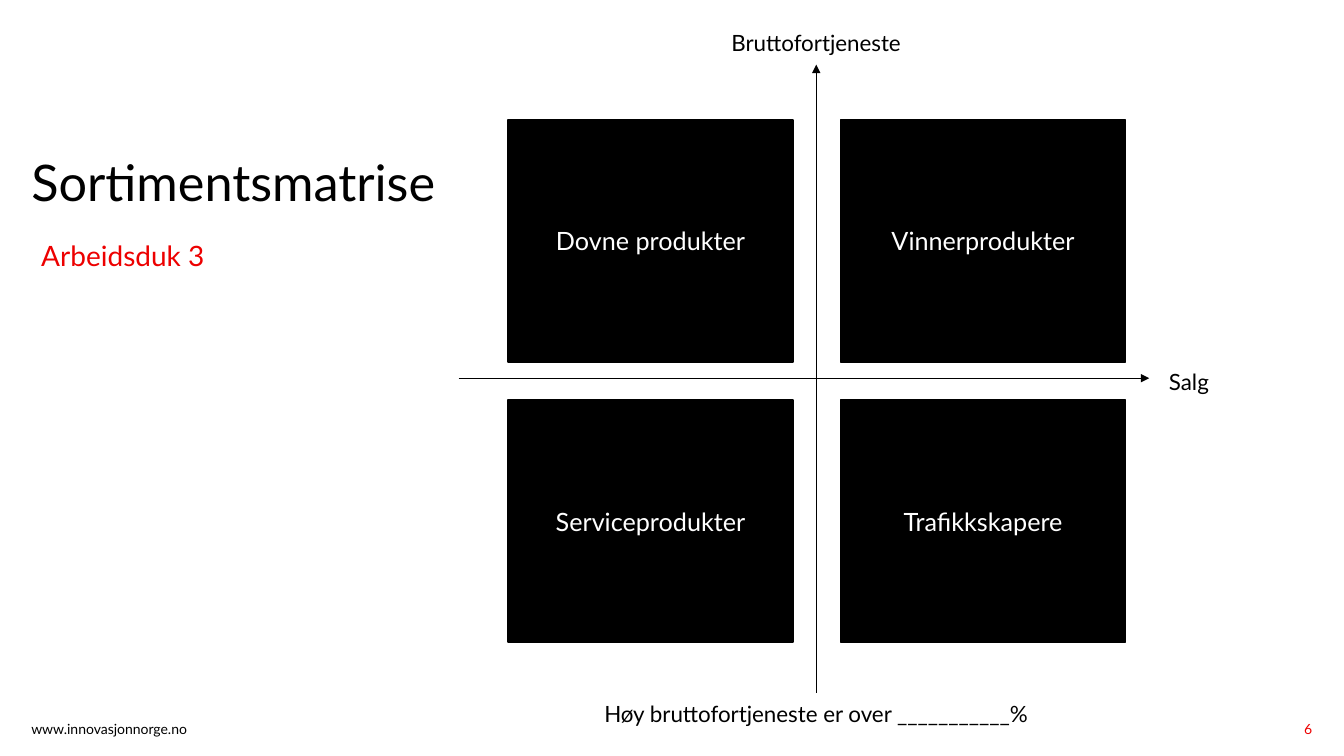
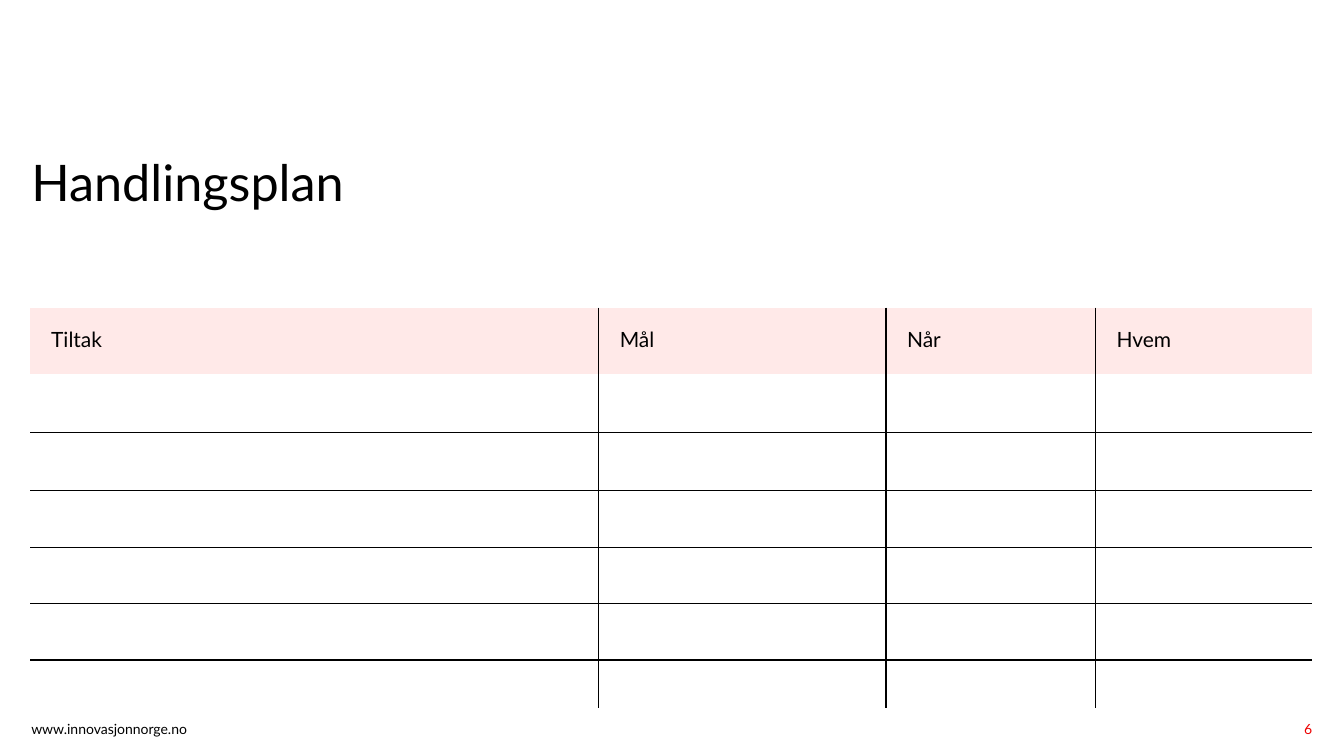
"""Build an assortment matrix slide and an action plan slide."""
from lxml.etree import SubElement
from pptx import Presentation
from pptx.dml.color import RGBColor
from pptx.enum.shapes import MSO_CONNECTOR, MSO_SHAPE
from pptx.enum.text import MSO_ANCHOR, PP_ALIGN
from pptx.oxml import parse_xml
from pptx.oxml.ns import nsdecls, qn
from pptx.util import Cm, Pt

BLACK = RGBColor(0x00, 0x00, 0x00)
WHITE = RGBColor(0xFF, 0xFF, 0xFF)
RED = RGBColor(0xED, 0x00, 0x00)
PINK = RGBColor(0xFF, 0xE9, 0xE8)
FONT = "Lato"


def write(frame, text, size, color=BLACK, align=PP_ALIGN.LEFT, margin=None):
    """Set one formatted paragraph, with equal margins if given."""
    frame.text = text
    frame.word_wrap = True
    if margin is not None:
        frame.margin_left = frame.margin_right = margin
        frame.margin_top = frame.margin_bottom = margin
    para = frame.paragraphs[0]
    para.alignment = align
    for span in para.runs:
        span.font.name = FONT
        span.font.size = Pt(size)
        span.font.color.rgb = color


def add_page(deck, title):
    """Add a slide with the shared title, footer and page number."""
    page = deck.slides.add_slide(deck.slide_layouts[5])
    holder = page.shapes.title
    holder.left, holder.top = Cm(0.79), Cm(3.99)
    holder.width, holder.height = Cm(14.5), Cm(3.58)
    write(holder.text_frame, title, 36, margin=0)
    holder.text_frame.vertical_anchor = MSO_ANCHOR.TOP
    holder.text_frame.paragraphs[0].line_spacing = 0.9
    footer = page.shapes.add_textbox(Cm(0.79), Cm(18.16), Cm(7.24), Cm(0.48))
    write(footer.text_frame, "www.innovasjonnorge.no", 10, margin=0)
    number = page.shapes.add_textbox(Cm(30.33), Cm(18.16), Cm(2.74), Cm(0.61))
    write(number.text_frame, "6", 10, RED, PP_ALIGN.RIGHT, margin=0)
    return page


deck = Presentation()
deck.slide_width, deck.slide_height = Cm(33.87), Cm(19.05)

page = add_page(deck, "Sortimentsmatrise")
quadrants = [
    ["Dovne produkter", "Vinnerprodukter"],
    ["Serviceprodukter", "Trafikkskapere"],
]
for top, names in zip((3.02, 10.08), quadrants):
    for left, name in zip((12.8, 21.18), names):
        box = page.shapes.add_shape(
            MSO_SHAPE.RECTANGLE, Cm(left), Cm(top), Cm(7.19), Cm(6.1))
        box.shadow.inherit = False
        box.fill.solid()
        box.fill.fore_color.rgb = BLACK
        box.line.color.rgb = BLACK
        box.line.width = Pt(1)
        write(box.text_frame, name, 18, WHITE, PP_ALIGN.CENTER)
        box.text_frame.vertical_anchor = MSO_ANCHOR.MIDDLE

for ends in ((11.56, 9.53, 28.96, 9.53), (20.57, 17.45, 20.57, 1.63)):
    axis = page.shapes.add_connector(
        MSO_CONNECTOR.STRAIGHT, *[Cm(value) for value in ends])
    axis.line.color.rgb = BLACK
    axis.line.width = Pt(0.5)
    SubElement(axis.line._get_or_add_ln(), qn("a:tailEnd"), type="triangle")
    SubElement(axis._element.spPr, qn("a:effectLst"))

labels = [
    ("Salg", 29.21, 9.14, 2, 16, BLACK, PP_ALIGN.LEFT),
    ("Bruttofortjeneste", 18.07, 0.61, 5, 16, BLACK, PP_ALIGN.CENTER),
    ("Høy bruttofortjeneste er over ___________%",
     14.73, 17.53, 11.68, 16, BLACK, PP_ALIGN.CENTER),
    ("Arbeidsduk 3", 0.79, 5.89, 11.48, 20, RED, PP_ALIGN.LEFT),
]
for text, left, top, width, size, color, align in labels:
    label = page.shapes.add_textbox(Cm(left), Cm(top), Cm(width), Cm(1))
    write(label.text_frame, text, size, color, align)

page = add_page(deck, "Handlingsplan")
headings = ["Tiltak", "Mål", "Når", "Hvem"]
widths = [14.33, 7.24, 5.28, 5.46]
heights = [1.68, 1.47, 1.47, 1.42, 1.42, 1.42, 1.22]
last_row, last_column = len(heights) - 1, len(widths) - 1
plan = page.shapes.add_table(
    len(heights), len(widths), Cm(0.76), Cm(7.75),
    Cm(sum(widths)), Cm(sum(heights))).table
for column, width in zip(plan.columns, widths):
    column.width = Cm(width)
for row, height in zip(plan.rows, heights):
    row.height = Cm(height)

for row in range(len(heights)):
    for column in range(len(widths)):
        cell = plan.cell(row, column)
        cell.fill.solid()
        cell.fill.fore_color.rgb = PINK if row == 0 else WHITE
        if row == 0:
            write(cell.text_frame, headings[column], 15)
            cell.vertical_anchor = MSO_ANCHOR.MIDDLE
            cell.margin_left, cell.margin_right = Cm(0.53), Cm(0.13)
            cell.margin_top, cell.margin_bottom = Cm(0), Cm(0.1)
        edges = {
            "lnL": column > 0,
            "lnR": column < last_column,
            "lnT": row > 1,
            "lnB": 0 < row < last_row,
        }
        for position, (edge, visible) in enumerate(edges.items()):
            paint = (f'<a:solidFill><a:srgbClr val="{BLACK}"/></a:solidFill>'
                     if visible else "<a:noFill/>")
            border = parse_xml(
                f'<a:{edge} {nsdecls("a")} w="{Pt(1)}">{paint}</a:{edge}>')
            cell._tc.get_or_add_tcPr().insert(position, border)

deck.save("out.pptx")
